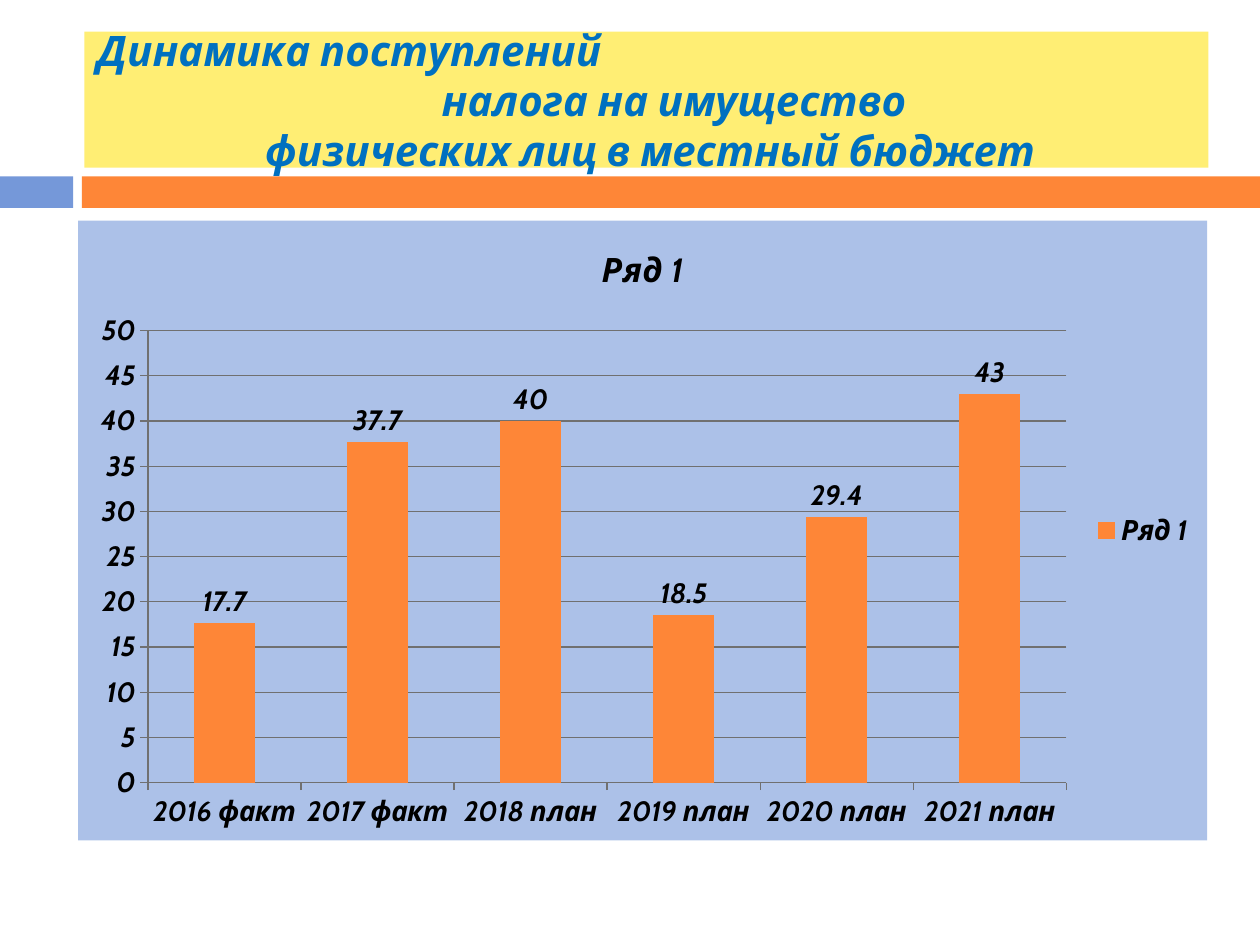
from dataclasses import dataclass

from lxml import etree
from pptx import Presentation
from pptx.chart.data import CategoryChartData
from pptx.dml.color import RGBColor
from pptx.enum import chart as ch, shapes, text
from pptx.oxml import parse_xml
from pptx.oxml.ns import nsdecls, qn
from pptx.util import Inches, Pt

COLORS = {
    "blue": "7598D9",
    "orange": "FE8637",
    "yellow": "FFEE74",
    "title": "0070C0",
    "plot": "ACC1E8",
    "grid": "707070",
    "text": "000000",
}
FONT = "Cabin"
RECEIPTS = {
    "2016 факт": 17.7,
    "2017 факт": 37.7,
    "2018 план": 40,
    "2019 план": 18.5,
    "2020 план": 29.4,
    "2021 план": 43,
}


@dataclass
class Band:
    left: float
    width: float
    color: str


@dataclass
class TitleLine:
    text: str
    align: text.PP_ALIGN
    indent: float = 0


BANDS = [Band(0, 0.58, "blue"), Band(0.65, 9.35, "orange")]
TITLE = [
    TitleLine("Динамика поступлений", text.PP_ALIGN.LEFT),
    TitleLine("налога на имущество", text.PP_ALIGN.CENTER, 0.44),
    TitleLine("физических лиц в местный бюджет", text.PP_ALIGN.CENTER, 0.06),
]


def rgb(name: str) -> RGBColor:
    return RGBColor.from_string(COLORS[name])


def paint(target, color: str) -> None:
    target.fill.solid()
    target.fill.fore_color.rgb = rgb(color)


def style(font, size: float, color: str = "text") -> None:
    font.name = FONT
    font.size = Pt(size)
    font.bold = font.italic = True
    font.color.rgb = rgb(color)


def add_text(p, content: str, *, size: float, color: str = "text") -> None:
    r = p.add_run()
    r.text = content
    style(r.font, size, color)


def add_band(s, band: Band) -> None:
    sp = s.shapes.add_shape(shapes.MSO_SHAPE.RECTANGLE, Inches(band.left),
                            Inches(1.4), Inches(band.width), Inches(0.25))
    sp.shadow.inherit = False
    paint(sp, band.color)
    sp.line.fill.background()


def fill_title(sp, lines: list[TitleLine]) -> None:
    sp.left, sp.top, sp.width, sp.height = map(Inches, (0.67, 0.25, 8.92, 1.08))
    paint(sp, "yellow")
    tf = sp.text_frame
    tf.word_wrap = True
    tf.auto_size = text.MSO_AUTO_SIZE.NONE
    tf.vertical_anchor = text.MSO_ANCHOR.MIDDLE
    for i, line in enumerate(lines):
        p = tf.add_paragraph() if i else tf.paragraphs[0]
        p.alignment = line.align
        p.line_spacing = Pt(28.6)
        p.space_before = Pt(0)
        p._p.get_or_add_pPr().set("marL", str(Inches(line.indent)))
        add_text(p, line.text, size=24, color="title")


def fill_chart_area(chart, color: str) -> None:
    sp_pr = parse_xml(f'<c:spPr {nsdecls("c", "a")}/>')
    solid = etree.SubElement(sp_pr, qn("a:solidFill"))
    etree.SubElement(solid, qn("a:srgbClr"), val=COLORS[color])
    line = etree.SubElement(sp_pr, qn("a:ln"))
    etree.SubElement(line, qn("a:noFill"))
    chart._chartSpace.find(qn("c:chart")).addnext(sp_pr)


def add_receipts_chart(s) -> None:
    data = CategoryChartData()
    data.categories = list(RECEIPTS)
    data.add_series("Ряд 1", list(RECEIPTS.values()))
    chart = s.shapes.add_chart(ch.XL_CHART_TYPE.COLUMN_CLUSTERED, Inches(0.62),
                               Inches(1.75), Inches(8.96), Inches(4.92), data).chart
    style(chart.font, 16)
    fill_chart_area(chart, "plot")
    chart.has_title = True
    add_text(chart.chart_title.text_frame.paragraphs[0], "Ряд 1", size=19.2)
    chart.chart_title.include_in_layout = False
    chart.has_legend = True
    chart.legend.position = ch.XL_LEGEND_POSITION.RIGHT
    chart.legend.include_in_layout = False

    for axis in (chart.category_axis, chart.value_axis):
        axis.major_tick_mark = ch.XL_TICK_MARK.OUTSIDE
        axis.format.line.color.rgb = rgb("grid")
    value_axis = chart.value_axis
    value_axis.minimum_scale, value_axis.maximum_scale = 0, 50
    value_axis.major_unit = 5
    value_axis.has_major_gridlines = True
    value_axis.major_gridlines.format.line.color.rgb = rgb("grid")

    plot = chart.plots[0]
    plot.gap_width = 150
    plot.vary_by_categories = False
    paint(plot.series[0].format, "orange")
    plot.has_data_labels = True
    labels = plot.data_labels
    labels.show_value = True
    labels.position = ch.XL_LABEL_POSITION.OUTSIDE_END
    style(labels.font, 16)


def main() -> None:
    prs = Presentation()
    prs.slide_width, prs.slide_height = Inches(10), Inches(7.5)
    s = prs.slides.add_slide(prs.slide_layouts[5])
    for band in BANDS:
        add_band(s, band)
    fill_title(s.shapes.title, TITLE)
    add_receipts_chart(s)
    prs.save("out.pptx")


if __name__ == "__main__":
    main()
